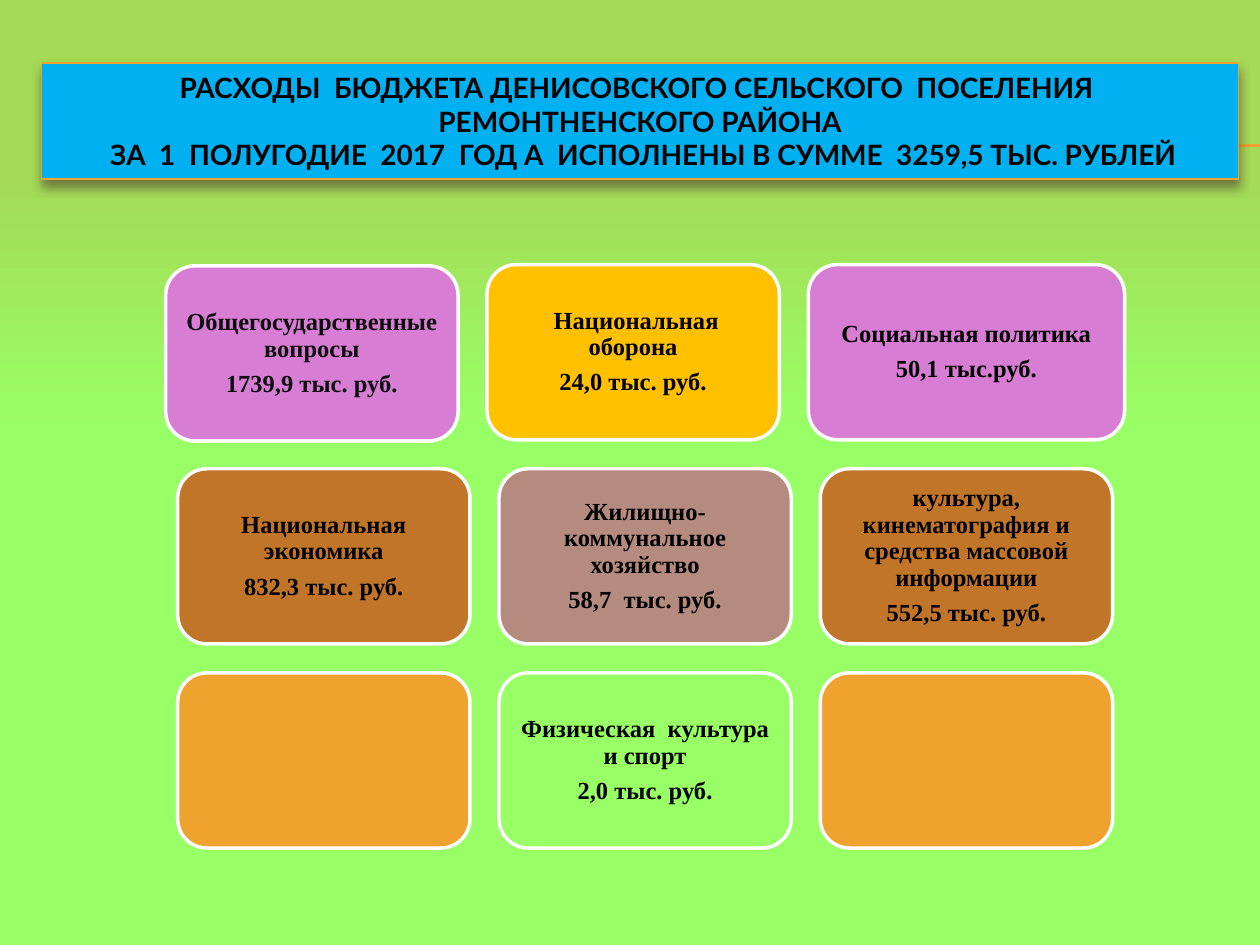
from dataclasses import dataclass

import pptx
import pptx.dml.color
import pptx.enum.shapes
import pptx.enum.text
import pptx.oxml
import pptx.oxml.ns
import pptx.util
from pptx.util import Inches

SHAPE = pptx.enum.shapes.MSO_SHAPE


@dataclass(frozen=True)
class Theme:
    """Colours, fonts and type sizes of the slide."""
    ground: str = "99FF66"
    ground_top: str = "A4DA56"
    banner: str = "00B0F0"
    accent: str = "F0A22E"
    shadow: str = "4E3B30"
    orchid: str = "D77DD3"
    gold: str = "FFC000"
    brown: str = "C17529"
    rose: str = "B58B80"
    white: str = "FFFFFF"
    black: str = "000000"
    near_black: str = "0D0D0D"
    title_font: str = "Lato"
    body_font: str = "Times New Roman"
    title_size: int = 16
    body_size: int = 14


THEME = Theme()
TITLE = ("РАСХОДЫ  БЮДЖЕТА ДЕНИСОВСКОГО СЕЛЬСКОГО  ПОСЕЛЕНИЯ  РЕМОНТНЕНСКОГО РАЙОНА\v"
         " ЗА  1  ПОЛУГОДИЕ  2017  ГОД А  ИСПОЛНЕНЫ В СУММЕ  3259,5 ТЫС. РУБЛЕЙ")
CARD_W, CARD_H, GAP = 2.32, 1.39, 0.23
LEFT, TOP = 1.41, 2.1
WIDE_W = 2.51
ROWS = [
    [(THEME.orchid, ["Общегосударственные вопросы", "1739,9 тыс. руб."]),
     (THEME.gold, [" Национальная оборона", "24,0 тыс. руб."]),
     (THEME.orchid, ["Социальная политика", "50,1 тыс.руб."])],
    [(THEME.brown, ["Национальная экономика", "832,3 тыс. руб."]),
     (THEME.rose, ["Жилищно-коммунальное хозяйство", "58,7  тыс. руб."]),
     (THEME.brown, ["культура, кинематография и средства массовой информации",
                    "552,5 тыс. руб."])],
    [(THEME.accent, []),
     (THEME.ground, ["Физическая  культура и спорт", "2,0 тыс. руб."]),
     (THEME.accent, [])],
]


def rgb(value):
    """Return a colour object for a hex string."""
    return pptx.dml.color.RGBColor.from_string(value)


def paint(sp, fill, line, width):
    """Give a shape a solid fill and an outline."""
    sp.fill.solid()
    sp.fill.fore_color.rgb = rgb(fill)
    sp.line.color.rgb = rgb(line)
    sp.line.width = pptx.util.Pt(width)


def write(tf, paragraphs, font, size, color=THEME.black, spacing=1.0, after=0, inset=None):
    """Fill a text frame with centred bold paragraphs."""
    tf.word_wrap = True
    tf.auto_size = pptx.enum.text.MSO_AUTO_SIZE.NONE
    tf.vertical_anchor = pptx.enum.text.MSO_ANCHOR.MIDDLE
    if inset is not None:
        tf.margin_left = tf.margin_right = tf.margin_top = tf.margin_bottom = Inches(inset)
    for i, text in enumerate(paragraphs):
        p = tf.add_paragraph() if i else tf.paragraphs[0]
        p.text = text
        p.alignment = pptx.enum.text.PP_ALIGN.CENTER
        p.line_spacing = spacing
        p.space_before = pptx.util.Pt(0)
        p.space_after = pptx.util.Pt(after)
        for r in p.runs:
            r.font.name = font
            r.font.size = pptx.util.Pt(size)
            r.font.bold = True
            r.font.color.rgb = rgb(color)


def add_background(s):
    """Fade the slide background from olive to bright green."""
    fill = s.background.fill
    fill.gradient()
    fill.gradient_angle = 270
    stops = [(0.18, THEME.ground_top), (0.46, THEME.ground)]
    for stop, (position, color) in zip(fill.gradient_stops, stops):
        stop.position = position
        stop.color.rgb = rgb(color)


def add_rule(s, y):
    """Draw a thin rule behind the title."""
    line = s.shapes.add_connector(pptx.enum.shapes.MSO_CONNECTOR.STRAIGHT,
                                  Inches(0.56), Inches(y), Inches(10), Inches(y))
    line.line.color.rgb = rgb(THEME.accent)
    line.line.width = pptx.util.Pt(0.75)
    line._element.spPr.append(pptx.oxml.parse_xml(
        f'<a:effectLst {pptx.oxml.ns.nsdecls("a")}/>'))
    s.shapes._spTree.insert(2, line._element)


def add_title(s):
    """Format the title placeholder as a banner with a soft shadow."""
    sp = s.shapes.title
    sp.left, sp.top, sp.width, sp.height = map(Inches, (0.33, 0.5, 9.5, 0.92))
    paint(sp, THEME.banner, THEME.accent, 0.79)
    write(sp.text_frame, [TITLE], THEME.title_font, THEME.title_size)
    sp._element.spPr.append(pptx.oxml.parse_xml(
        f'<a:effectLst {pptx.oxml.ns.nsdecls("a")}>'
        f'<a:outerShdw blurRad="{pptx.util.Pt(6)}" dist="{pptx.util.Pt(4)}" dir="5400000"'
        f' rotWithShape="0"><a:srgbClr val="{THEME.shadow}"><a:alpha val="60000"/>'
        '</a:srgbClr></a:outerShdw></a:effectLst>'))


def add_card(s, x, y, w, fill, lines, color):
    """Add one rounded expense card."""
    sp = s.shapes.add_shape(SHAPE.FLOWCHART_ALTERNATE_PROCESS,
                            Inches(x), Inches(y), Inches(w), Inches(CARD_H))
    sp.shadow.inherit = False
    paint(sp, fill, THEME.white, 2)
    write(sp.text_frame, lines, THEME.body_font, THEME.body_size, color=color,
          spacing=0.9, after=4.9, inset=0.06)


def add_cards(s):
    """Lay out the cards in rows that share one centre line."""
    for i, row in enumerate(ROWS):
        widths = [CARD_W, CARD_W, CARD_W if i else WIDE_W]
        x = LEFT - (sum(widths) - 3 * CARD_W) / 2
        y = TOP + i * (CARD_H + GAP)
        for j, (w, (fill, lines)) in enumerate(zip(widths, row)):
            first = i == j == 0
            add_card(s, x, y + (0.01 if first else 0), w, fill, lines,
                     THEME.near_black if first else THEME.black)
            x += w + GAP


def main():
    """Build and save the slide."""
    prs = pptx.Presentation()
    prs.slide_width, prs.slide_height = Inches(10), Inches(7.5)
    s = prs.slides.add_slide(prs.slide_layouts[5])
    add_background(s)
    for y in (1.15, 1.16):
        add_rule(s, y)
    add_title(s)
    add_cards(s)
    prs.save("out.pptx")


if __name__ == "__main__":
    main()
